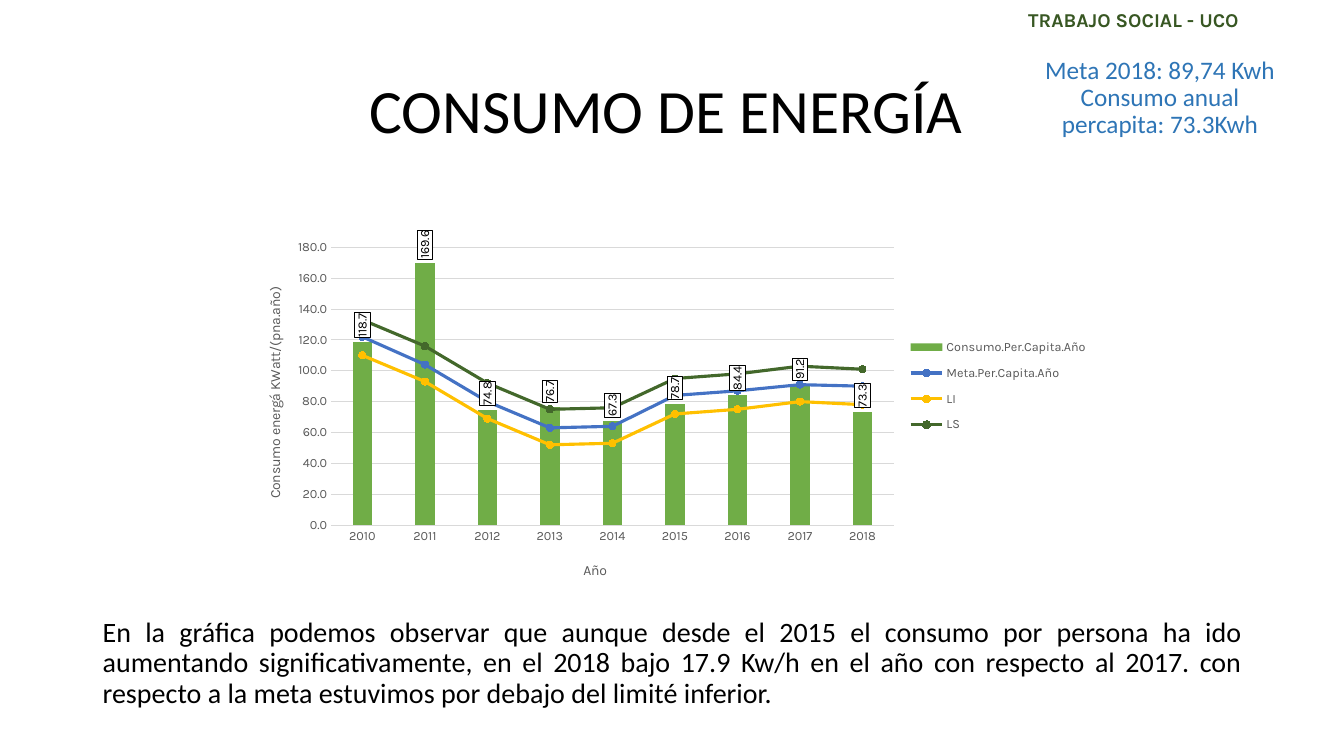
"""Build the energy consumption slide with its combined column and line chart."""
from copy import deepcopy

from lxml import etree
from pptx import Presentation
from pptx.chart.data import CategoryChartData
from pptx.dml.color import RGBColor
from pptx.enum.chart import XL_CHART_TYPE as CT
from pptx.enum.chart import XL_LABEL_POSITION as LP
from pptx.enum.chart import XL_LEGEND_POSITION as LEG
from pptx.enum.chart import XL_MARKER_STYLE as MS
from pptx.enum.chart import XL_TICK_MARK as TM
from pptx.enum.text import MSO_ANCHOR as MA
from pptx.enum.text import PP_ALIGN as PA
from pptx.oxml import parse_xml
from pptx.oxml.ns import nsdecls, qn
from pptx.util import Inches, Pt

BLACK = RGBColor(0x00, 0x00, 0x00)
GRAY = RGBColor(0x59, 0x59, 0x59)
GRID = RGBColor(0xD9, 0xD9, 0xD9)
GREEN = RGBColor(0x70, 0xAD, 0x47)
BLUE = RGBColor(0x44, 0x72, 0xC4)
YELLOW = RGBColor(0xFF, 0xC0, 0x00)
DARK_GREEN = RGBColor(0x43, 0x68, 0x2B)
HEADER_GREEN = RGBColor(0x38, 0x57, 0x23)
GOAL_BLUE = RGBColor(0x2E, 0x75, 0xB6)

prs = Presentation()
prs.slide_width, prs.slide_height = Inches(13.33), Inches(7.5)
s = prs.slides.add_slide(prs.slide_layouts[6])


def add_text(text, x, y, w, h, size, color=BLACK, font="Calibri", bold=False,
             align=PA.LEFT, anchor=MA.MIDDLE):
    tf = s.shapes.add_textbox(Inches(x), Inches(y), Inches(w), Inches(h)).text_frame
    tf.word_wrap = True
    tf.vertical_anchor = anchor
    for i, line in enumerate(text.split("\n")):
        p = tf.paragraphs[0] if i == 0 else tf.add_paragraph()
        p.alignment = align
        p.line_spacing = 0.9
        r = p.add_run()
        r.text = line
        r.font.size, r.font.name, r.font.bold = Pt(size), font, bold
        r.font.color.rgb = color


def place(parent, before, inner=False, **box):
    for old in parent.findall(qn("c:layout")):
        parent.remove(old)
    layout = etree.Element(qn("c:layout"))
    manual = etree.SubElement(layout, qn("c:manualLayout"))
    if inner:
        etree.SubElement(manual, qn("c:layoutTarget")).set("val", "inner")
    for key in ("x", "y"):
        etree.SubElement(manual, qn(f"c:{key}Mode")).set("val", "edge")
    for key, value in box.items():
        etree.SubElement(manual, qn(f"c:{key}")).set("val", str(value))
    parent.find(qn(before)).addprevious(layout)


add_text("TRABAJO SOCIAL - UCO", 10.1, 0, 3.33, 0.43, 14, HEADER_GREEN, "Karla", True)

YEARS = [str(year) for year in range(2010, 2019)]
CONSUMPTION = [118.7, 169.6, 74.8, 76.7, 67.3, 78.7, 84.4, 91.2, 73.3]
LINES = [
    ("Meta.Per.Capita.Año", BLUE, [122, 104, 80, 63, 64, 84, 87, 91, 90]),
    ("LI", YELLOW, [110, 93, 69, 52, 53, 72, 75, 80, 78]),
    ("LS", DARK_GREEN, [133, 116, 92, 75, 76, 95, 98, 103, 101]),
]
data = CategoryChartData(number_format="0.0")
data.categories = YEARS
data.add_series("Consumo.Per.Capita.Año", CONSUMPTION)
for name, color, values in LINES:
    data.add_series(name, values)
chart = s.shapes.add_chart(CT.COLUMN_CLUSTERED, Inches(2.16), Inches(1.64),
                           Inches(9), Inches(4.38), data).chart
chart.has_title = False
chart.font.name, chart.font.size = "Karla", Pt(10)
chart.font.color.rgb = BLACK

bar = chart.plots[0]
bar.gap_width = 219
bar.vary_by_categories = False
bar_xml = chart._chartSpace.xpath("//c:barChart")[0]
line_xml = parse_xml(f'<c:lineChart {nsdecls("c")}><c:grouping val="standard"/>'
                     '<c:varyColors val="0"/></c:lineChart>')
for ser in bar_xml.findall(qn("c:ser"))[1:]:
    for invert in ser.findall(qn("c:invertIfNegative")):
        ser.remove(invert)
    line_xml.append(ser)
etree.SubElement(line_xml, qn("c:marker")).set("val", "1")
for axis_id in bar_xml.findall(qn("c:axId")):
    line_xml.append(deepcopy(axis_id))
bar_xml.addnext(line_xml)

columns = bar.series[0]
columns.format.fill.solid()
columns.format.fill.fore_color.rgb = GREEN
labels = columns.data_labels
labels.show_value = True
labels.number_format, labels.number_format_is_linked = "0.0", False
labels.position = LP.OUTSIDE_END
labels.font.name, labels.font.size = "Karla", Pt(9)
labels.font.color.rgb = BLACK
label_text = bar_xml.xpath("./c:ser/c:dLbls/c:txPr")[0]
label_text.find(qn("a:bodyPr")).set("rot", "-5400000")
label_text.find(qn("a:bodyPr")).set("vert", "horz")
label_text.addprevious(parse_xml(
    f'<c:spPr {nsdecls("c", "a")}><a:solidFill><a:srgbClr val="FFFFFF"/></a:solidFill>'
    '<a:ln w="9525"><a:solidFill><a:srgbClr val="000000"/></a:solidFill></a:ln></c:spPr>'))

for series, (name, color, values) in zip(chart.plots[1].series, LINES):
    series.smooth = False
    series.format.line.color.rgb = color
    series.format.line.width = Pt(2.25)
    series.marker.style, series.marker.size = MS.CIRCLE, 5
    series.marker.format.fill.solid()
    series.marker.format.fill.fore_color.rgb = color
    series.marker.format.line.color.rgb = color

cat_axis, val_axis = chart.category_axis, chart.value_axis
for axis, title, x, y in ((cat_axis, "Año", 0.4, 0.89),
                          (val_axis, "Consumo energá KWatt/(pna.año)", 0.05, 0.27)):
    axis.major_tick_mark = axis.minor_tick_mark = TM.NONE
    axis.tick_labels.font.name, axis.tick_labels.font.size = "Karla", Pt(9)
    axis.tick_labels.font.color.rgb = GRAY
    tf = axis.axis_title.text_frame
    tf.text = title
    font = tf.paragraphs[0].runs[0].font
    font.name, font.size, font.bold = "Karla", Pt(10), False
    font.color.rgb = GRAY
    place(axis.axis_title._element, "c:overlay", x=x, y=y)
val_body = val_axis.axis_title._element.xpath(".//a:bodyPr")[0]
val_body.set("rot", "-5400000")
val_body.set("vert", "horz")
cat_axis.format.line.color.rgb = GRID
cat_axis.format.line.width = Pt(0.75)
val_axis.format.line.fill.background()
val_axis.minimum_scale, val_axis.maximum_scale, val_axis.major_unit = 0, 180, 20
val_axis.tick_labels.number_format = "0.0"
val_axis.tick_labels.number_format_is_linked = False
val_axis.major_gridlines.format.line.color.rgb = GRID
val_axis.major_gridlines.format.line.width = Pt(0.75)

chart.has_legend = True
legend = chart.legend
legend.position, legend.include_in_layout = LEG.RIGHT, False
legend.font.name, legend.font.size = "Karla", Pt(9)
legend.font.color.rgb = GRAY
place(legend._element, "c:overlay", x=0.75, y=0.37, w=0.22, h=0.26)
place(bar_xml.getparent(), "c:barChart", inner=True, x=0.125, y=0.186, w=0.62, h=0.629)

add_text("CONSUMO DE ENERGÍA", 0.86, 0.4, 11.5, 1.45, 44, align=PA.CENTER)
add_text("En la gráfica podemos observar que aunque desde el 2015 el consumo por persona ha "
         "ido aumentando significativamente, en el 2018 bajo 17.9 Kw/h en el año con respecto "
         "al 2017. con respecto a la meta estuvimos por debajo del limité inferior.",
         0.92, 5.86, 11.5, 1.45, 20, align=PA.JUSTIFY)
add_text("Meta 2018: 89,74 Kwh\nConsumo anual percapita: 73.3Kwh",
         10.2, 0.52, 2.61, 1.06, 18, GOAL_BLUE, align=PA.CENTER, anchor=MA.TOP)

prs.save("out.pptx")
